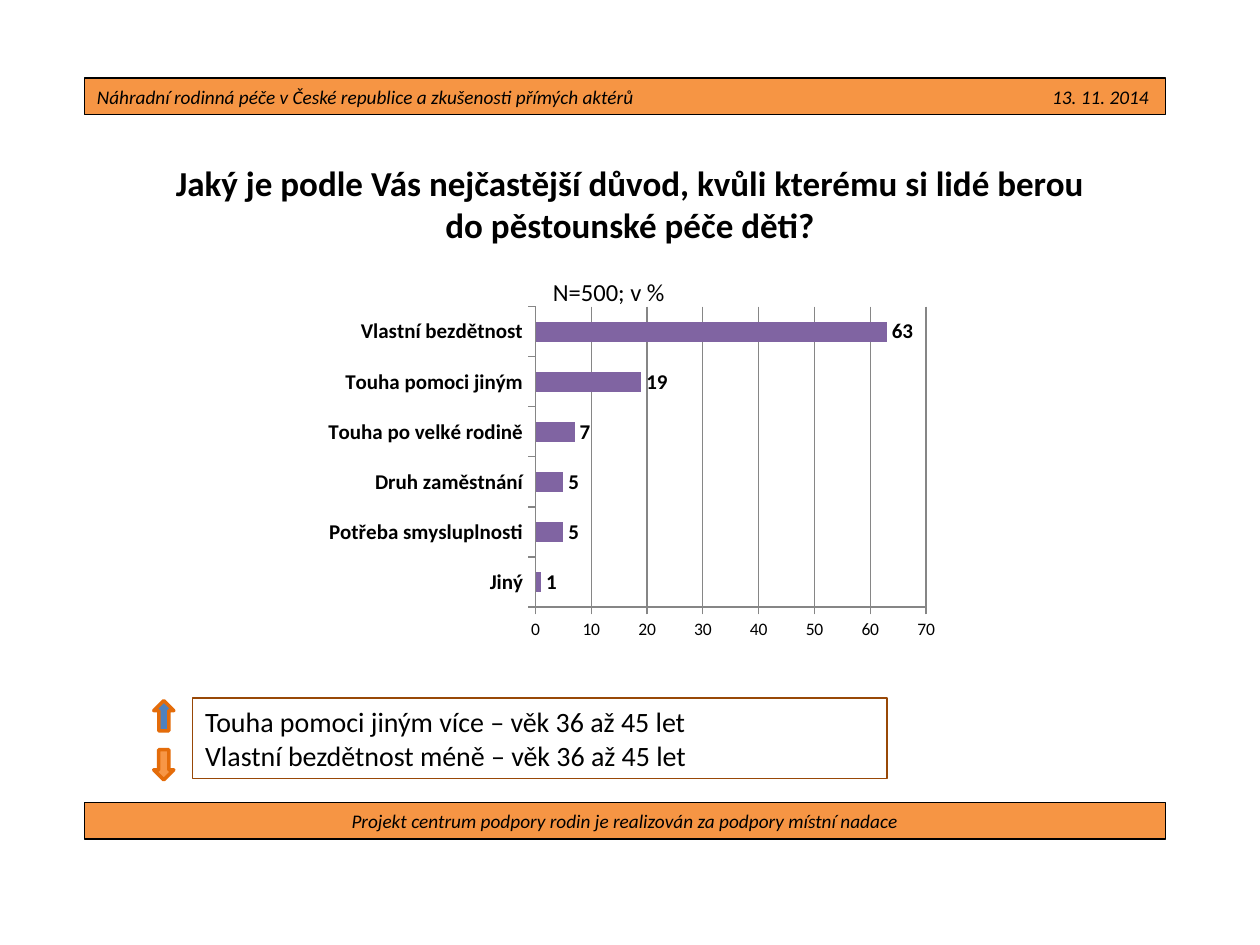
from dataclasses import dataclass

from lxml import etree
from pptx import Presentation
from pptx.chart.data import CategoryChartData
from pptx.dml.color import RGBColor
from pptx.enum.chart import XL_CHART_TYPE, XL_LABEL_POSITION, XL_TICK_MARK
from pptx.enum.shapes import MSO_SHAPE
from pptx.enum.text import MSO_ANCHOR, PP_ALIGN
from pptx.oxml import parse_xml
from pptx.oxml.ns import nsdecls, qn
from pptx.util import Inches, Pt

BAR_CLUSTERED = XL_CHART_TYPE.BAR_CLUSTERED
OUTSIDE_END = XL_LABEL_POSITION.OUTSIDE_END
TICK_OUTSIDE = XL_TICK_MARK.OUTSIDE
RECTANGLE, DOWN_ARROW = MSO_SHAPE.RECTANGLE, MSO_SHAPE.DOWN_ARROW
LEFT, CENTER = PP_ALIGN.LEFT, PP_ALIGN.CENTER
TOP, MIDDLE = MSO_ANCHOR.TOP, MSO_ANCHOR.MIDDLE


@dataclass(frozen=True)
class Theme:
    font: str = "Calibri"
    ink: str = "000000"
    band: str = "F69544"
    frame: str = "984807"
    arrow_line: str = "E46C0A"
    more: str = "4F81BD"
    less: str = "F79646"
    bar: str = "8064A2"
    grid: str = "868686"
    title: int = 20
    note: int = 16
    sample: int = 14
    category: int = 12
    band_text: int = 11
    axis: int = 10


THEME = Theme()


@dataclass(frozen=True)
class Box:
    left: float
    top: float
    width: float
    height: float

    def lengths(self):
        return [Inches(v) for v in (self.left, self.top, self.width, self.height)]


@dataclass(frozen=True)
class Text:
    lines: tuple[str, ...]
    size: int
    align: PP_ALIGN = LEFT
    anchor: MSO_ANCHOR = MIDDLE
    bold: bool = False
    italic: bool = False


@dataclass(frozen=True)
class Arrow:
    top: float
    fill: str
    rotation: int


ARROWS = (Arrow(5.56, THEME.more, 180), Arrow(5.95, THEME.less, 0))
REASONS = {
    "Jiný": 1,
    "Potřeba smysluplnosti": 5,
    "Druh zaměstnání": 5,
    "Touha po velké rodině": 7,
    "Touha pomoci jiným": 19,
    "Vlastní bezdětnost": 63,
}


def rgb(value: str) -> RGBColor:
    return RGBColor.from_string(value)


def style_font(font, size: int, bold: bool = False, italic: bool = False) -> None:
    font.name, font.size = THEME.font, Pt(size)
    font.bold, font.italic = bold, italic
    font.color.rgb = rgb(THEME.ink)


def write(shape, text: Text) -> None:
    frame = shape.text_frame
    frame.word_wrap = True
    frame.vertical_anchor = text.anchor
    frame.text = "\n".join(text.lines)
    for paragraph in frame.paragraphs:
        paragraph.alignment = text.align
        style_font(paragraph.font, text.size, text.bold, text.italic)


def add_text(slide, box: Box, text: Text) -> None:
    write(slide.shapes.add_textbox(*box.lengths()), text)


def add_outlined(slide, kind, box: Box, line: str, weight: float, fill: str | None = None):
    shape = slide.shapes.add_shape(kind, *box.lengths())
    shape.shadow.inherit = False
    if fill:
        shape.fill.solid()
        shape.fill.fore_color.rgb = rgb(fill)
    else:
        shape.fill.background()
    shape.line.color.rgb = rgb(line)
    shape.line.width = Pt(weight)
    return shape


def add_band(slide, top: float, text: str, align: PP_ALIGN):
    band = add_outlined(slide, RECTANGLE, Box(0.67, top, 8.58, 0.29), THEME.ink, 0.75, THEME.band)
    write(band, Text((text,), THEME.band_text, align, italic=True))
    return band


def add_right_tab(paragraph, position: float) -> None:
    properties = paragraph.font._element.getparent()
    tabs = etree.Element(qn("a:tabLst"))
    etree.SubElement(tabs, qn("a:tab"), pos=str(Inches(position)), algn="r")
    properties.insert(0, tabs)


def set_plot_layout(chart, area: Box) -> None:
    """Fix the inner plot area, given in fractions of the chart."""
    parts = (("x", area.left), ("y", area.top), ("w", area.width), ("h", area.height))
    modes = '<c:layoutTarget val="inner"/><c:xMode val="edge"/><c:yMode val="edge"/>'
    values = "".join(f'<c:{name} val="{value}"/>' for name, value in parts)
    layout = parse_xml(
        f'<c:layout {nsdecls("c")}><c:manualLayout>{modes}{values}</c:manualLayout></c:layout>'
    )
    plot_area = chart._chartSpace.chart.plotArea
    for old in plot_area.findall(qn("c:layout")):
        plot_area.remove(old)
    plot_area.insert(0, layout)


def add_reasons_chart(slide, box: Box) -> None:
    data = CategoryChartData(number_format="0")
    data.categories = list(REASONS)
    data.add_series("Důvod", list(REASONS.values()))
    chart = slide.shapes.add_chart(BAR_CLUSTERED, *box.lengths(), data).chart
    chart.has_legend = chart.has_title = False
    style_font(chart.font, THEME.axis)
    set_plot_layout(chart, Box(0.35, 0.02, 0.62, 0.87))

    plot = chart.plots[0]
    plot.vary_by_categories = False
    plot.gap_width = 150
    series_fill = plot.series[0].format.fill
    series_fill.solid()
    series_fill.fore_color.rgb = rgb(THEME.bar)
    plot.has_data_labels = True
    labels = plot.data_labels
    labels.show_value = True
    labels.position = OUTSIDE_END
    labels.number_format, labels.number_format_is_linked = "0", False
    style_font(labels.font, THEME.category, bold=True)

    reasons, percent = chart.category_axis, chart.value_axis
    style_font(reasons.tick_labels.font, THEME.category, bold=True)
    style_font(percent.tick_labels.font, THEME.axis)
    percent.minimum_scale, percent.maximum_scale, percent.major_unit = 0, 70, 10
    percent.has_major_gridlines = True
    for axis in (reasons, percent):
        axis.major_tick_mark = TICK_OUTSIDE
    for part in (reasons, percent, percent.major_gridlines):
        part.format.line.color.rgb = rgb(THEME.grid)
        part.format.line.width = Pt(0.75)


def add_arrow(slide, arrow: Arrow) -> None:
    box = Box(1.22, arrow.top, 0.16, 0.24)
    shape = add_outlined(slide, DOWN_ARROW, box, THEME.arrow_line, 2, arrow.fill)
    shape.rotation = arrow.rotation


def main() -> None:
    deck = Presentation()
    deck.slide_width, deck.slide_height = Inches(10), Inches(7.5)
    slide = deck.slides.add_slide(deck.slide_layouts[6])

    add_band(slide, 6.37, "Projekt centrum podpory rodin je realizován za podpory místní nadace", CENTER)
    question = "Jaký je podle Vás nejčastější důvod, kvůli kterému si lidé berou do pěstounské péče děti?"
    add_text(slide, Box(1.14, 1.23, 7.72, 0.77), Text((question,), THEME.title, CENTER, TOP, bold=True))
    add_text(slide, Box(4.29, 2.15, 1.26, 0.57), Text(("N=500; v %",), THEME.sample, anchor=TOP))
    header = add_band(
        slide, 0.62, "Náhradní rodinná péče v České republice a zkušenosti přímých aktérů\t13. 11. 2014", LEFT
    )
    add_right_tab(header.text_frame.paragraphs[0], 8.35)
    findings = ("Touha pomoci jiným více – věk 36 až 45 let", "Vlastní bezdětnost méně – věk 36 až 45 let")
    finding_box = add_outlined(slide, RECTANGLE, Box(1.53, 5.54, 5.51, 0.64), THEME.frame, 0.75)
    write(finding_box, Text(findings, THEME.note))
    add_reasons_chart(slide, Box(2.5, 2.38, 5, 2.74))
    for arrow in ARROWS:
        add_arrow(slide, arrow)
    deck.save("out.pptx")


if __name__ == "__main__":
    main()
